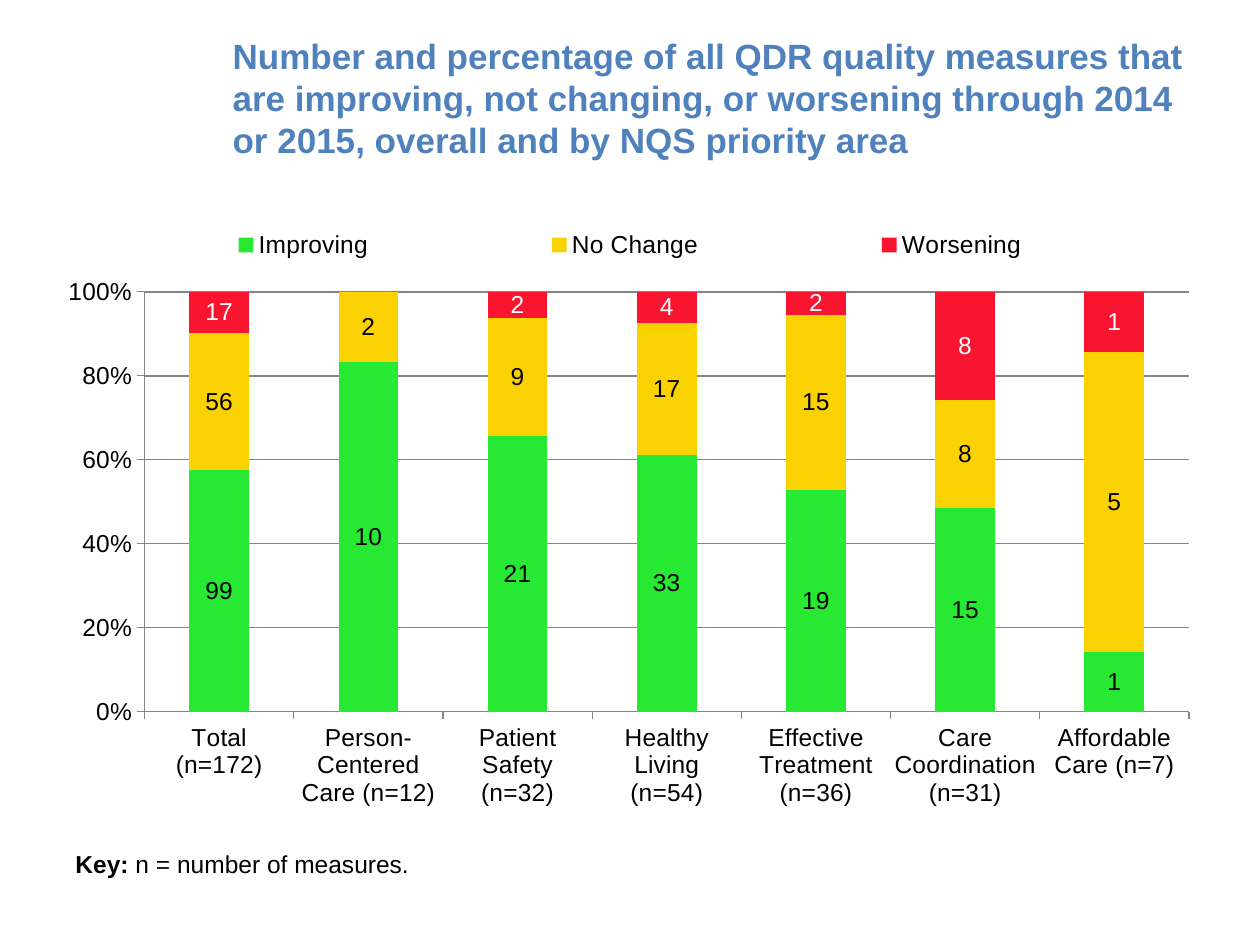
from dataclasses import dataclass

from lxml.etree import SubElement
from pptx import Presentation
from pptx.chart.data import CategoryChartData
from pptx.dml.color import RGBColor
from pptx.enum.chart import (XL_CHART_TYPE, XL_LABEL_POSITION,
                             XL_LEGEND_POSITION, XL_TICK_MARK)
from pptx.enum.text import MSO_ANCHOR, MSO_AUTO_SIZE, PP_ALIGN
from pptx.oxml.ns import qn
from pptx.util import Emu, Pt

PX_PER_INCH = 126


@dataclass(frozen=True)
class Theme:
    font: str = "Arial"
    title_size: int = 20
    body_size: int = 14
    title: str = "4F81BD"
    text: str = "000000"
    label_on_dark: str = "FFFFFF"
    axis: str = "868686"
    improving: str = "27E833"
    no_change: str = "FAD201"
    worsening: str = "F9152F"


THEME = Theme()

TITLE = ("Number and percentage of all QDR quality measures that are improving, "
         "not changing, or worsening through 2014 or 2015, overall and by NQS "
         "priority area")
PRIORITY_AREAS = ["Total (n=172)", "Person-Centered Care (n=12)",
                  "Patient Safety (n=32)", "Healthy Living (n=54)",
                  "Effective Treatment (n=36)", "Care Coordination (n=31)",
                  "Affordable Care (n=7)"]
# name, counts, fill colour, label colour
TRENDS = [
    ("Improving", [99, 10, 21, 33, 19, 15, 1], THEME.improving, THEME.text),
    ("No Change", [56, 2, 9, 17, 15, 8, 5], THEME.no_change, THEME.text),
    ("Worsening", [17, 0, 2, 4, 2, 8, 1], THEME.worsening, THEME.label_on_dark),
]


def px(length):
    return Emu(round(length * 914400 / PX_PER_INCH))


def style_font(font, size, color, bold=False):
    font.name = THEME.font
    font.size = Pt(size)
    font.bold = bold
    font.color.rgb = RGBColor.from_string(color)


def add_title(slide):
    title = slide.shapes.title
    title.left, title.top, title.width, title.height = map(px, (220, 37, 977, 120))
    frame = title.text_frame
    frame.text = TITLE
    frame.word_wrap = True
    frame.auto_size = MSO_AUTO_SIZE.NONE
    frame.vertical_anchor = MSO_ANCHOR.MIDDLE
    paragraph = frame.paragraphs[0]
    paragraph.alignment = PP_ALIGN.LEFT
    style_font(paragraph.runs[0].font, THEME.title_size, THEME.title, bold=True)


def set_layout(parent, index, x, y, w, h, inner=False):
    """Place a chart part by fractions of the chart area."""
    for old in parent.findall(qn("c:layout")):
        parent.remove(old)
    layout = SubElement(parent, qn("c:layout"))
    parent.insert(index, layout)
    manual = SubElement(layout, qn("c:manualLayout"))
    settings = [("layoutTarget", "inner")] if inner else []
    settings += [("xMode", "edge"), ("yMode", "edge"),
                 ("x", x), ("y", y), ("w", w), ("h", h)]
    for tag, value in settings:
        SubElement(manual, qn(f"c:{tag}")).set("val", str(value))


def hide_zero_labels(chart):
    for series_element, (_, counts, *_) in zip(chart.element.iter(qn("c:ser")), TRENDS):
        labels = series_element.find(qn("c:dLbls"))
        for point, count in enumerate(counts):
            if count == 0:
                label = SubElement(labels, qn("c:dLbl"))
                labels.insert(0, label)
                SubElement(label, qn("c:idx")).set("val", str(point))
                SubElement(label, qn("c:delete")).set("val", "1")


def style_line(line, width):
    line.color.rgb = RGBColor.from_string(THEME.axis)
    line.width = Pt(width)


def style_axes(chart):
    for axis in (chart.category_axis, chart.value_axis):
        axis.major_tick_mark = XL_TICK_MARK.OUTSIDE
        axis.minor_tick_mark = XL_TICK_MARK.NONE
        style_line(axis.format.line, 0.75)
        style_font(axis.tick_labels.font, THEME.body_size, THEME.text)
    # Level labels wrap under their columns
    category_axis = next(chart.element.iter(qn("c:catAx")))
    label_body = category_axis.find(qn("c:txPr")).find(qn("a:bodyPr"))
    label_body.set("rot", "0")
    label_body.set("vert", "horz")

    percent = chart.value_axis
    percent.minimum_scale, percent.maximum_scale = 0, 1
    percent.major_unit = 0.2
    percent.has_major_gridlines = True
    style_line(percent.major_gridlines.format.line, 1)
    percent.tick_labels.number_format = "0%"
    percent.tick_labels.number_format_is_linked = False


def style_series(series, fill, label_color):
    series.format.fill.solid()
    series.format.fill.fore_color.rgb = RGBColor.from_string(fill)
    labels = series.data_labels
    labels.show_value = True
    labels.position = XL_LABEL_POSITION.CENTER
    style_font(labels.font, THEME.body_size, label_color)


def add_trend_chart(slide):
    data = CategoryChartData()
    data.categories = PRIORITY_AREAS
    for name, counts, *_ in TRENDS:
        data.add_series(name, counts)
    chart = slide.shapes.add_chart(XL_CHART_TYPE.COLUMN_STACKED_100,
                                   *map(px, (63, 220, 1134, 624)), data).chart
    chart.has_title = False
    style_font(chart.font, THEME.body_size, THEME.text)

    chart.has_legend = True
    chart.legend.position = XL_LEGEND_POSITION.TOP
    chart.legend.include_in_layout = False
    root = chart.element.find(qn("c:chart"))
    set_layout(root.find(qn("c:legend")), 1, 0, 0, 1, 0.08)
    set_layout(root.find(qn("c:plotArea")), 0, 0.072, 0.115, 0.921, 0.673, inner=True)

    plot = chart.plots[0]
    plot.gap_width, plot.overlap = 150, 100
    plot.vary_by_categories = False
    style_axes(chart)
    for series, (_, _, fill, label_color) in zip(plot.series, TRENDS):
        style_series(series, fill, label_color)
    hide_zero_labels(chart)


def add_key(slide):
    frame = slide.shapes.add_textbox(*map(px, (63, 843, 359, 43))).text_frame
    frame.word_wrap = False
    frame.auto_size = MSO_AUTO_SIZE.SHAPE_TO_FIT_TEXT
    for text, bold in (("Key:", True), (" n = number of measures.", False)):
        run = frame.paragraphs[0].add_run()
        run.text = text
        style_font(run.font, THEME.body_size, THEME.text, bold)


def main():
    presentation = Presentation()
    presentation.slide_width, presentation.slide_height = px(1260), px(945)
    slide = presentation.slides.add_slide(presentation.slide_layouts[5])
    add_title(slide)
    add_trend_chart(slide)
    add_key(slide)
    presentation.save("out.pptx")


if __name__ == "__main__":
    main()
